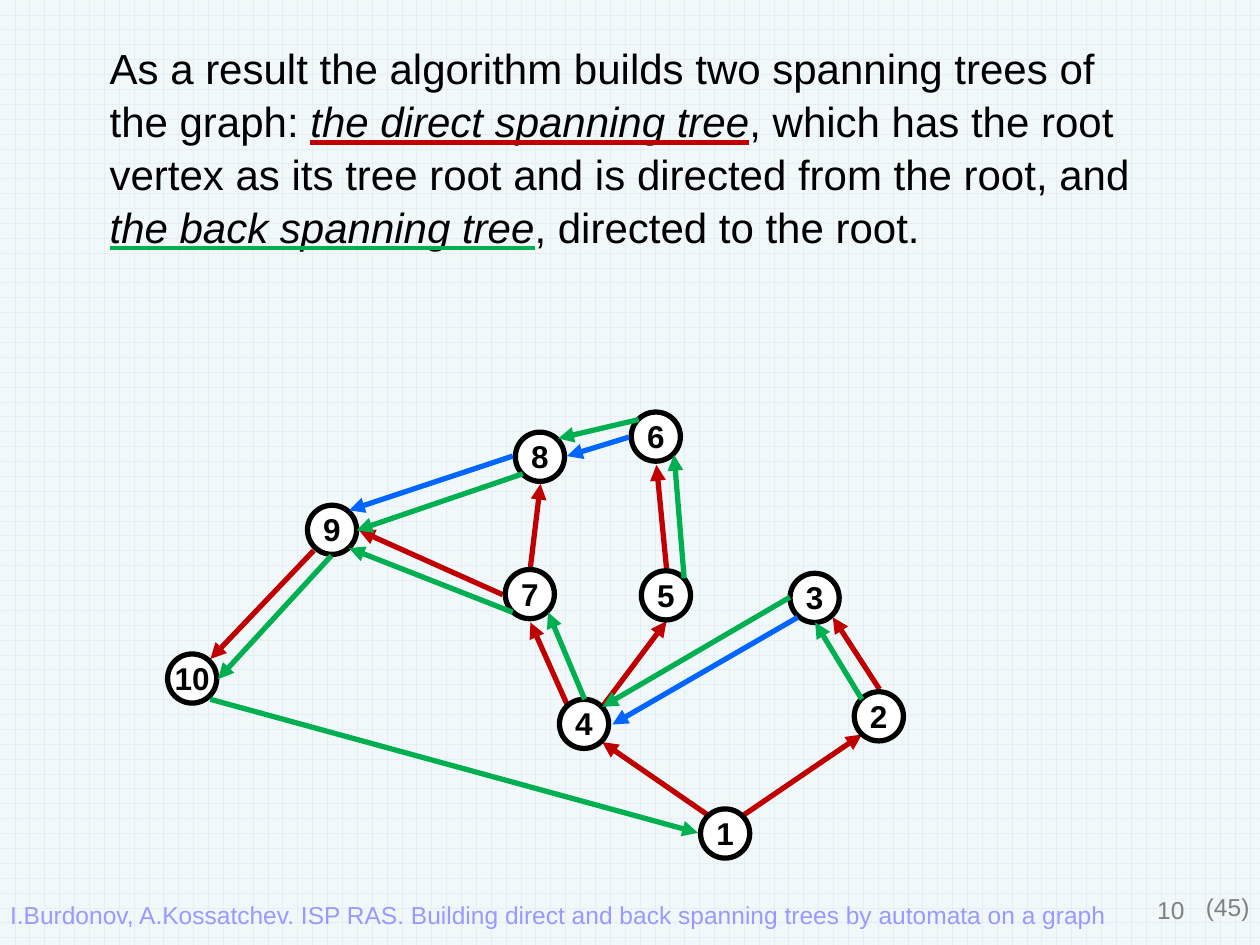
from dataclasses import dataclass
from typing import NamedTuple

from lxml import etree
from pptx import Presentation
from pptx import util as u
from pptx.dml.color import RGBColor
from pptx.enum import dml, shapes, text
from pptx.oxml import ns


@dataclass(frozen=True)
class Theme:
    font: str = "Arial"
    ink: str = "000000"
    white: str = "FFFFFF"
    red: str = "C00000"
    green: str = "00B050"
    blue: str = "0066FF"
    gray: str = "808080"
    lilac: str = "9999FF"
    grid: str = "E7EDF5"
    paper: str = "F1F8F9"
    body: int = 24
    label: int = 18
    small: int = 14
    stroke: int = 3


class Box(NamedTuple):
    left: float
    top: float
    wide: float
    high: float


class Node(NamedTuple):
    name: str
    x: float
    y: float


class Edge(NamedTuple):
    x1: int
    y1: int
    x2: int
    y2: int


class Run(NamedTuple):
    words: str
    under: str = ""


class Note(NamedTuple):
    words: str
    box: Box
    color: str
    align: text.PP_ALIGN
    pad: float
    wrap: bool


T = Theme()
COLS, ROWS = 1000, 750
WIDE, HIGH = u.Inches(10), u.Inches(7.5)
DISC = 39
TAG = Box(0, 3.5, 63, 27)

NODES = [
    Node("1", 575.5, 661.5), Node("2", 697.5, 568.5), Node("3", 646.5, 474.5),
    Node("4", 463.5, 574.5), Node("5", 528.5, 472.5), Node("6", 520.5, 346.5),
    Node("7", 420.5, 471.5), Node("8", 428.5, 362.5), Node("9", 263.5, 420.5),
    Node("10", 152.5, 538.5),
]
DIRECT = [
    Edge(590, 647, 684, 583), Edge(562, 647, 478, 589), Edge(450, 559, 421, 494),
    Edge(478, 561, 529, 493), Edge(698, 547, 661, 490), Edge(399, 472, 285, 421),
    Edge(421, 450, 429, 384), Edge(529, 451, 521, 369), Edge(249, 437, 167, 523),
]
OTHER = [Edge(633, 490, 486, 575), Edge(499, 347, 450, 362), Edge(407, 362, 277, 405)]
BACK = [
    Edge(167, 555, 554, 661), Edge(263, 441, 173, 539), Edge(415, 376, 283, 421),
    Edge(407, 486, 277, 435), Edge(507, 333, 443, 348), Edge(543, 459, 535, 361),
    Edge(464, 555, 435, 486), Edge(627, 474, 478, 561), Edge(684, 555, 647, 494),
]
STORY = [
    Run("As a result the algorithm builds two spanning trees of the graph: "),
    Run("the direct spanning tree", T.red),
    Run(", which has the root vertex as its tree root and is directed from the root, and "),
    Run("the back spanning tree", T.green),
    Run(", directed to the root."),
]
NOTES = [
    Note("10", Box(717, 705, 233, 52), T.gray, text.PP_ALIGN.RIGHT, 0.05, True),
    Note("(45)", Box(957, 708, 35, 23), T.gray, text.PP_ALIGN.LEFT, 0, False),
    Note("I.Burdonov, A.Kossatchev. ISP RAS. Building direct and back spanning trees "
         "by automata on a graph", Box(8, 714, 922, 59), T.lilac,
         text.PP_ALIGN.LEFT, 0, True),
]


def col(n: float) -> int:
    return round(WIDE * n / COLS)


def row(n: float) -> int:
    return round(HIGH * n / ROWS)


def rgb(code: str) -> RGBColor:
    return RGBColor.from_string(code)


def assign(item, form: dict) -> None:
    for key, val in form.items():
        setattr(item, key, val)


def place(box: Box) -> tuple:
    return col(box.left), row(box.top), col(box.wide), row(box.high)


def style(font, size: int, color: str, **more) -> None:
    assign(font, {"name": T.font, "size": u.Pt(size), **more})
    font.color.rgb = rgb(color)


def frame(shape, pad: float, wrap: bool, anchor) -> text.MSO_ANCHOR:
    side = u.Inches(pad)
    assign(shape.text_frame, {
        "margin_left": 2 * side, "margin_right": 2 * side, "margin_top": side,
        "margin_bottom": side, "word_wrap": wrap, "vertical_anchor": anchor,
        "auto_size": text.MSO_AUTO_SIZE.NONE})
    return shape.text_frame.paragraphs[0]


def oval(slide, box: Box):
    shape = slide.shapes.add_shape(shapes.MSO_SHAPE.OVAL, *place(box))
    shape.shadow.inherit = False
    return shape


def centre(node: Node, wide: float, high: float, drop: float = 0) -> Box:
    return Box(node.x - wide / 2, node.y - high / 2 + drop, wide, high)


def draw_disc(slide, node: Node) -> None:
    disc = oval(slide, centre(node, DISC, DISC))
    disc.fill.solid()
    disc.fill.fore_color.rgb = rgb(T.white)
    disc.line.color.rgb = rgb(T.ink)
    disc.line.width = u.Pt(T.stroke)


def draw_tag(slide, node: Node) -> None:
    tag = oval(slide, centre(node, TAG.wide, TAG.high, TAG.top))
    tag.fill.background()
    tag.line.fill.background()
    para = frame(tag, 0, False, text.MSO_ANCHOR.MIDDLE)
    assign(para, {"text": node.name, "alignment": text.PP_ALIGN.CENTER,
                  "line_spacing": u.Pt(16)})
    style(para.runs[0].font, T.label, T.ink, bold=True)


def draw_edge(slide, edge: Edge, color: str) -> None:
    line = slide.shapes.add_connector(
        shapes.MSO_CONNECTOR.STRAIGHT, col(edge.x1), row(edge.y1),
        col(edge.x2), row(edge.y2))
    line.line.color.rgb = rgb(color)
    line.line.width = u.Pt(T.stroke)
    props = line.element.spPr
    etree.SubElement(props.find(ns.qn("a:ln")), ns.qn("a:tailEnd"), type="triangle")
    etree.SubElement(props, ns.qn("a:effectLst"))


def draw_note(slide, note: Note) -> None:
    box = slide.shapes.add_textbox(*place(note.box))
    para = frame(box, note.pad, note.wrap, text.MSO_ANCHOR.TOP)
    assign(para, {"text": note.words, "alignment": note.align})
    style(para.runs[0].font, T.small, note.color)


def add_run(para, part: Run) -> None:
    run = para.add_run()
    run.text = part.words
    style(run.font, T.body, T.ink, italic=bool(part.under))
    if part.under:
        run.font.underline = text.MSO_UNDERLINE.HEAVY_LINE
        fill = etree.Element(ns.qn("a:uFill"))
        solid = etree.SubElement(fill, ns.qn("a:solidFill"))
        etree.SubElement(solid, ns.qn("a:srgbClr"), val=part.under)
        run.font._element.find(ns.qn("a:latin")).addprevious(fill)


def main() -> None:
    deck = Presentation()
    assign(deck, {"slide_width": WIDE, "slide_height": HIGH})
    slide = deck.slides.add_slide(deck.slide_layouts[5])
    fill = slide.background.fill
    fill.patterned()
    fill.pattern = dml.MSO_PATTERN.HORIZONTAL_BRICK
    fill.fore_color.rgb, fill.back_color.rgb = rgb(T.grid), rgb(T.paper)

    title = slide.shapes.title
    assign(title, dict(zip(("left", "top", "width", "height"),
                           place(Box(87, 32, 835, 227)))))
    para = frame(title, 0, True, text.MSO_ANCHOR.TOP)
    assign(para, {"alignment": text.PP_ALIGN.LEFT, "line_spacing": 1.05})
    for part in STORY:
        add_run(para, part)

    for note in NOTES:
        draw_note(slide, note)
    for edge in DIRECT:
        draw_edge(slide, edge, T.red)
    for node in NODES:
        draw_disc(slide, node)
    for color, edges in ((T.blue, OTHER), (T.green, BACK)):
        for edge in edges:
            draw_edge(slide, edge, color)
    for node in NODES:
        draw_tag(slide, node)
    deck.save("out.pptx")


if __name__ == "__main__":
    main()
